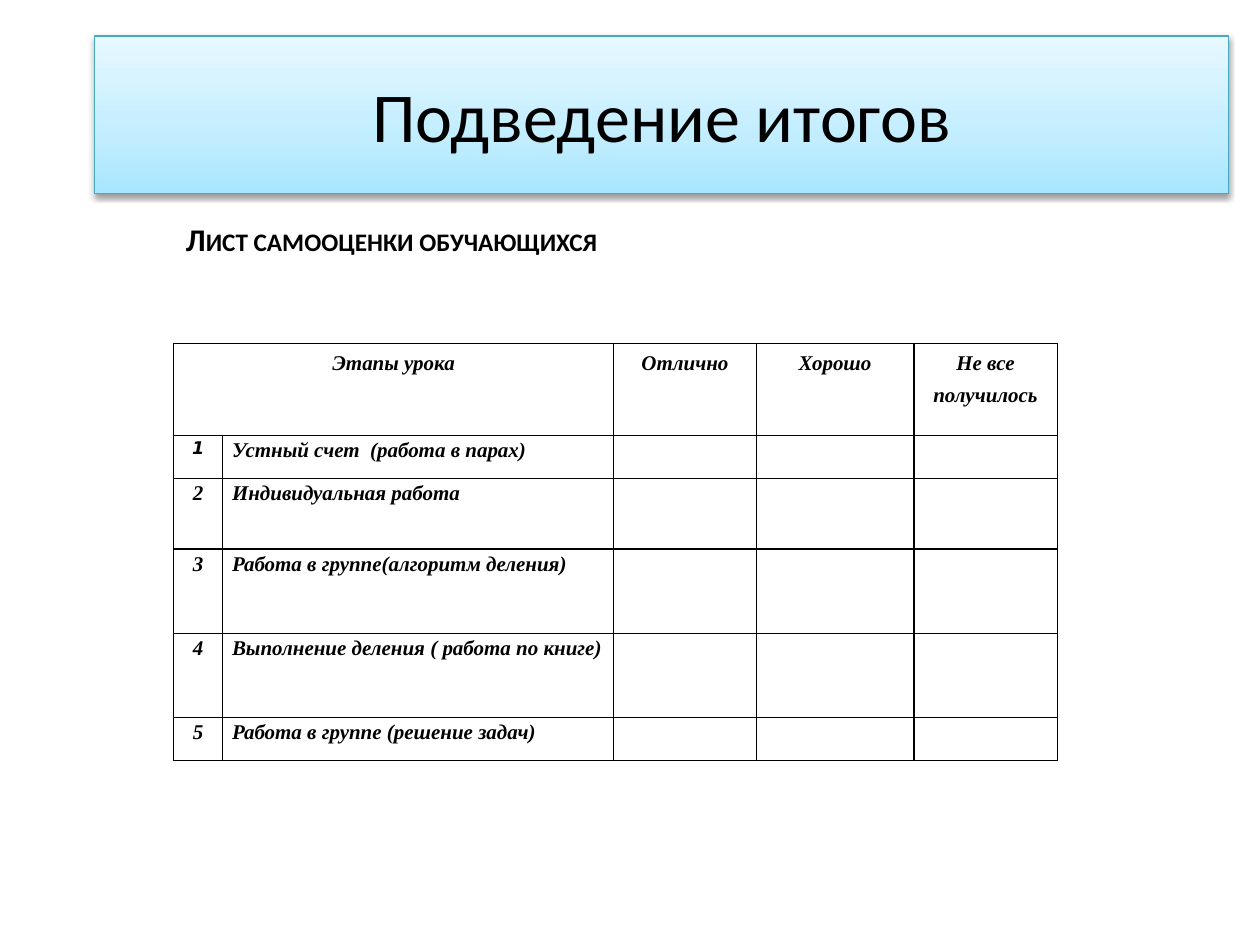
from lxml.etree import SubElement as Sub
from pptx import Presentation
from pptx.dml.color import RGBColor
from pptx.enum.text import MSO_ANCHOR, PP_ALIGN
from pptx.oxml import parse_xml
from pptx.oxml.ns import nsdecls, qn
from pptx.util import Pt

BLACK = "000000"
SERIF = "Times New Roman"
COLS = [28, 223.5, 81.5, 90, 82]
ROWS = [52.5, 24.5, 40.3, 48.2, 48.2, 24.5]
HEADS = ["Этапы урока", None, "Отлично", "Хорошо", "Не все получилось"]
STAGES = [
    "Устный счет  (работа в парах)",
    "Индивидуальная работа",
    "Работа в группе(алгоритм деления)",
    "Выполнение деления ( работа по книге)",
    "Работа в группе (решение задач)",
]


def color(code):
    return RGBColor.from_string(code)


def style(par, size, name, bold=False, italic=False):
    for run in par.runs:
        font = run.font
        font.size, font.name = Pt(size), name
        font.bold, font.italic = bold, italic
        font.color.rgb = color(BLACK)


def place(shape, box):
    shape.left, shape.top, shape.width, shape.height = map(Pt, box)


def shade(shape, stops):
    """Give the shape an upward gradient and a soft shadow below it."""
    marks = "".join(
        f'<a:gs pos="{pos * 1000}"><a:srgbClr val="{code}"/></a:gs>'
        for pos, code in stops)
    props = shape.fill._xPr
    shape.fill.background()
    blank = props.find(qn("a:noFill"))
    props.replace(blank, parse_xml(
        f'<a:gradFill {nsdecls("a")} rotWithShape="1"><a:gsLst>{marks}'
        '</a:gsLst><a:lin ang="16200000" scaled="0"/></a:gradFill>'))
    shape.line.color.rgb = color("46AAC5")
    shape.line.width = Pt(0.75)
    props.append(parse_xml(
        f'<a:effectLst {nsdecls("a")}><a:outerShdw blurRad="{Pt(3.1)}" '
        f'dist="{Pt(1.6)}" dir="5400000" rotWithShape="0">'
        f'<a:srgbClr val="{BLACK}"><a:alpha val="38000"/></a:srgbClr>'
        '</a:outerShdw></a:effectLst>'))


def add_title(slide, box):
    title = slide.shapes.title
    place(title, box)
    shade(title, [(0, "A7E6FF"), (35, "C1EDFF"), (100, "E7F8FF")])
    frame = title.text_frame
    frame.text = "Подведение итогов"
    frame.vertical_anchor = MSO_ANCHOR.MIDDLE
    par = frame.paragraphs[0]
    par.alignment = PP_ALIGN.CENTER
    style(par, 40, "Calibri")


def add_label(slide, box):
    frame = slide.shapes.add_textbox(*map(Pt, box)).text_frame
    frame.word_wrap = True
    frame.text = "Лист самооценки обучающихся"
    par = frame.paragraphs[0]
    style(par, 18, "Calibri", bold=True)
    par.runs[0].font._element.set("cap", "small")


def rule(cell):
    """Draw the four borders of a cell and leave it unfilled."""
    props = cell._tc.get_or_add_tcPr()
    for side in "LRTB":
        line = Sub(props, qn(f"a:ln{side}"), w=str(Pt(1)))
        Sub(Sub(line, qn("a:solidFill")), qn("a:srgbClr"), val=BLACK)
    cell.fill.background()


def write(cell, text, align, size=12, name=SERIF):
    cell.text = text
    par = cell.text_frame.paragraphs[0]
    par.alignment = align
    par.line_spacing = 1.15
    style(par, size, name, bold=True, italic=True)
    return par


def add_grid(slide, left, top):
    shape = slide.shapes.add_table(
        len(ROWS), len(COLS), Pt(left), Pt(top), Pt(sum(COLS)), Pt(sum(ROWS)))
    table = shape.table
    table.first_row = table.horz_banding = False
    for col, width in zip(table.columns, COLS):
        col.width = Pt(width)
    for row, height in zip(table.rows, ROWS):
        row.height = Pt(height)
    for cell in table.iter_cells():
        cell.margin_left = cell.margin_right = Pt(5.4)
        cell.margin_top = cell.margin_bottom = 0
        rule(cell)

    table.cell(0, 0).merge(table.cell(0, 1))
    for col, head in enumerate(HEADS):
        if head:
            par = write(table.cell(0, col), head, PP_ALIGN.CENTER)
            par.line_spacing = Pt(18)
            par.space_before, par.space_after = Pt(4.8), Pt(6)
    for row, stage in enumerate(STAGES, 1):
        face = (10, "DejaVu Sans") if row == 1 else (12, SERIF)
        write(table.cell(row, 0), str(row), PP_ALIGN.CENTER, *face)
        write(table.cell(row, 1), stage, PP_ALIGN.LEFT)


def main():
    deck = Presentation()
    deck.slide_width, deck.slide_height = Pt(720), Pt(540)
    slide = deck.slides.add_slide(deck.slide_layouts[5])
    add_title(slide, (54, 20.6, 648, 90))
    add_grid(slide, 99.2, 196.4)
    add_label(slide, (99.2, 122.4, 360, 72.7))
    deck.save("out.pptx")


if __name__ == "__main__":
    main()
